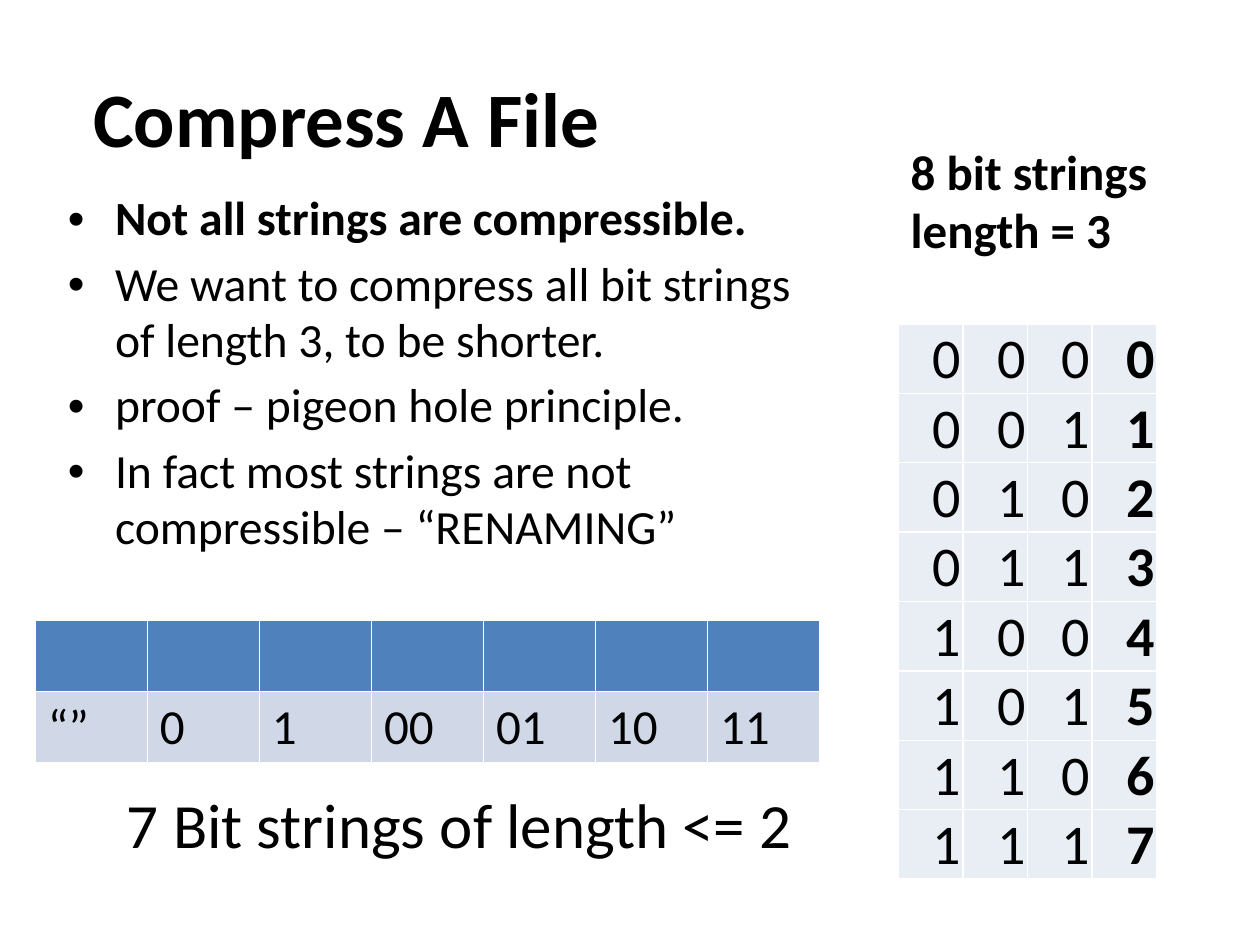
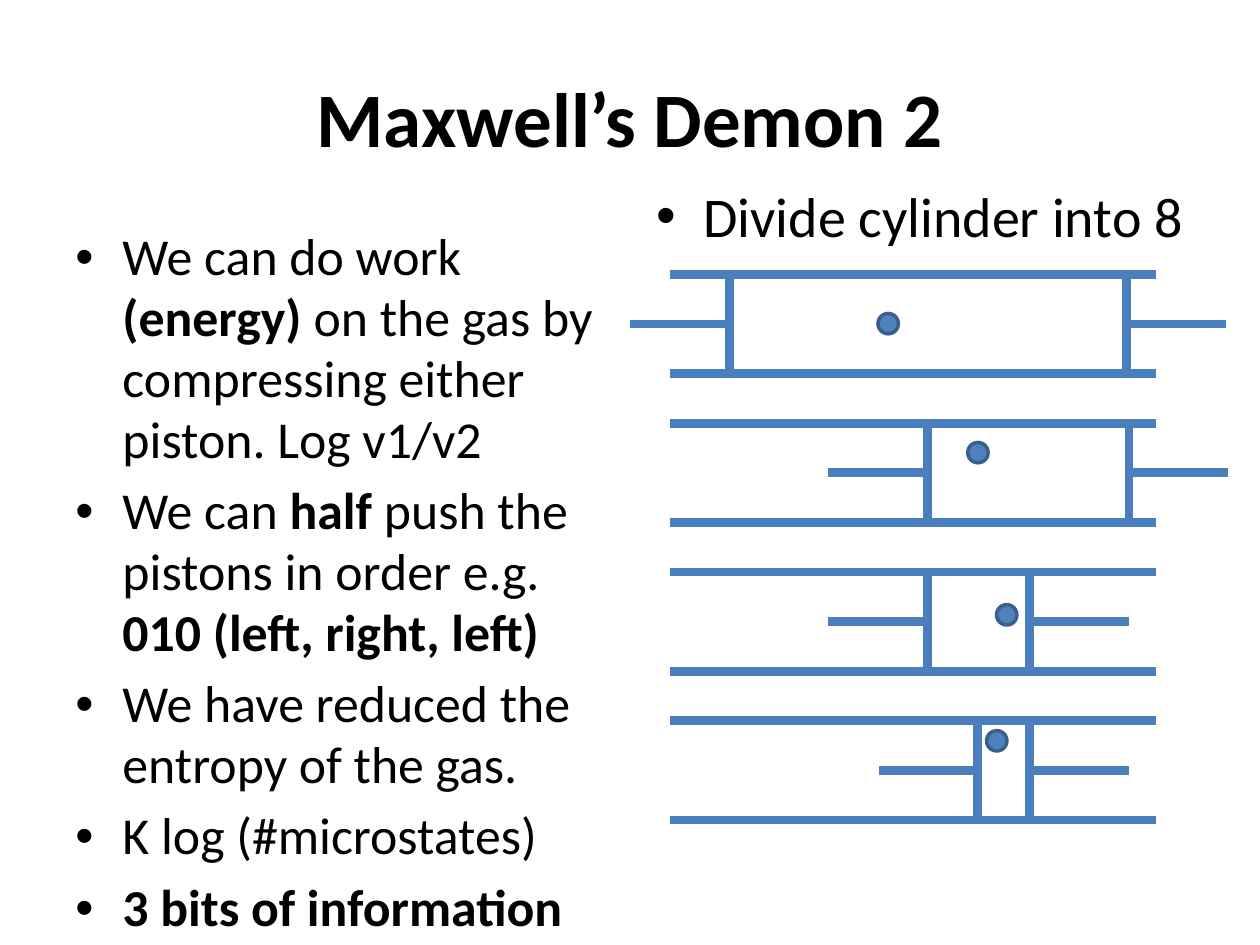
"""Build two slides on compression and Maxwell's demon."""
from dataclasses import dataclass

from lxml import etree
from pptx import Presentation
from pptx import util as u
from pptx.dml.color import RGBColor
from pptx.enum import shapes, text
from pptx.oxml.ns import qn

BLACK = RGBColor(0x00, 0x00, 0x00)
BLUE = RGBColor(0x4F, 0x81, 0xBD)
LINE_BLUE = RGBColor(0x4B, 0x7E, 0xBC)
DARK_BLUE = RGBColor(0x3A, 0x5F, 0x8C)
BAND = RGBColor(0xD0, 0xD8, 0xE8)
PALE = RGBColor(0xE9, 0xED, 0xF4)
FONT = "Calibri"
INDENT = u.Cm(0.95)
WALL_X, WALL_LENGTH, BORE = 13.5, 9.8, 2.0
ROD_LENGTH, GAS_SIZE = 2.0, 0.41
FIRST_TOP, CYLINDER_STEP = 5.53, 3.0


@dataclass
class Box:
    left: float
    top: float
    width: float
    height: float

    def lengths(self) -> tuple:
        return tuple(u.Cm(v) for v in (self.left, self.top, self.width, self.height))


@dataclass
class Cylinder:
    left_piston: float
    right_piston: float
    gas_x: float
    gas_drop: float


CYLINDERS = [
    Cylinder(14.71, 22.71, 17.7, 0.79),
    Cylinder(18.69, 22.76, 19.51, 0.39),
    Cylinder(18.69, 20.75, 20.09, 0.66),
    Cylinder(19.71, 20.75, 19.89, 0.2),
]


def add_bullet(p) -> None:
    pPr = p._p.get_or_add_pPr()
    pPr.set("marL", str(INDENT))
    pPr.set("indent", str(-INDENT))
    etree.SubElement(pPr, qn("a:buFont")).set("typeface", "Arial")
    etree.SubElement(pPr, qn("a:buChar")).set("char", "•")


def write(tf, lines: list, size: float, bold: bool = False, align=None,
          bullet: bool = False, spacing: float | None = None) -> None:
    """Fill a text frame; asterisks switch bold on and off."""
    for i, line in enumerate(lines):
        p = tf.add_paragraph() if i else tf.paragraphs[0]
        p.alignment = align
        p.line_spacing = spacing
        if bullet:
            p.space_before = u.Pt(round(size * 0.2, 1))
            add_bullet(p)
        for j, part in enumerate(line.split("*")):
            if part:
                r = p.add_run()
                r.text = part
                r.font.name, r.font.size = FONT, u.Pt(size)
                r.font.bold = bold or j % 2 == 1
                r.font.color.rgb = BLACK


def add_text(s, box: Box, lines: list, size: float, wrap: bool = True, **fmt) -> None:
    tf = s.shapes.add_textbox(*box.lengths()).text_frame
    tf.word_wrap = wrap
    write(tf, lines, size, **fmt)


def add_slide(prs, title: str, title_width: float):
    s = prs.slides.add_slide(prs.slide_layouts[5])
    sp = s.shapes.title
    sp.left, sp.top, sp.width, sp.height = Box(1.27, 0.76, title_width, 3.18).lengths()
    sp.text_frame.vertical_anchor = text.MSO_ANCHOR.MIDDLE
    write(sp.text_frame, [title], 44, bold=True, align=text.PP_ALIGN.CENTER)
    return s


def add_grid(s, left: float, top: float, col_width: float, row_height: float,
             rows: list, fills: list, size: float, header: bool = False,
             tight: bool = False, align=None):
    n_rows, n_cols = len(rows), len(rows[0])
    box = Box(left, top, col_width * n_cols, row_height * n_rows)
    tbl = s.shapes.add_table(n_rows, n_cols, *box.lengths()).table
    tbl.first_row, tbl.horz_banding = header, header
    for i, row in enumerate(rows):
        for j, value in enumerate(row):
            cell = tbl.cell(i, j)
            cell.fill.solid()
            cell.fill.fore_color.rgb = fills[i]
            if tight:
                cell.margin_left = cell.margin_right = cell.margin_top = u.Cm(0.03)
                cell.margin_bottom = 0
                cell.vertical_anchor = text.MSO_ANCHOR.BOTTOM
            write(cell.text_frame, [value], size, align=align)


def add_line(s, x1: float, y1: float, x2: float, y2: float) -> None:
    c = s.shapes.add_connector(shapes.MSO_CONNECTOR.STRAIGHT,
                               *(u.Cm(v) for v in (x1, y1, x2, y2)))
    c.line.color.rgb, c.line.width = LINE_BLUE, u.Pt(5)
    etree.SubElement(c._element.spPr, qn("a:effectLst"))


def add_cylinder(s, cyl: Cylinder, top: float) -> None:
    bottom, middle = top + BORE, top + BORE / 2
    for y in (top, bottom):
        add_line(s, WALL_X, y, WALL_X + WALL_LENGTH, y)
    for x, rod in ((cyl.left_piston, -ROD_LENGTH), (cyl.right_piston, ROD_LENGTH)):
        add_line(s, x, top, x, bottom)
        add_line(s, x + rod, middle, x, middle)
    box = Box(cyl.gas_x, top + cyl.gas_drop, GAS_SIZE, GAS_SIZE)
    sp = s.shapes.add_shape(shapes.MSO_SHAPE.OVAL, *box.lengths())
    sp.shadow.inherit = False
    sp.fill.solid()
    sp.fill.fore_color.rgb = BLUE
    sp.line.color.rgb, sp.line.width = DARK_BLUE, u.Pt(2)


def build_compression(prs) -> None:
    s = add_slide(prs, "Compress A File", 11.43)
    add_text(s, Box(1.12, 3.73, 15.24, 7.87), [
        "*Not all strings are compressible.*",
        "We want to compress all bit strings of length 3, to be shorter.",
        "proof – pigeon hole principle.",
        "In fact most strings are not compressible – “RENAMING”",
    ], 27.2, bullet=True, spacing=0.98)
    short_strings = ["“”", "0", "1", "00", "01", "10", "11"]
    add_grid(s, 0.71, 12.5, 2.26, 1.44, [[""] * len(short_strings), short_strings],
             [BLUE, BAND], 28, header=True)
    bit_rows = [[*f"{n:03b}", f"*{n}*"] for n in range(8)]
    add_grid(s, 18.11, 6.53, 1.3, 1.4, bit_rows, [PALE] * len(bit_rows), 32,
             tight=True, align=text.PP_ALIGN.RIGHT)
    add_text(s, Box(2.31, 15.72, 14.05, 1.8), ["7 Bit strings of length <= 2"], 36,
             wrap=False)
    add_text(s, Box(18.11, 2.72, 5.41, 2.64), ["8 bit strings", "length = 3"], 28,
             bold=True)


def build_demon(prs) -> None:
    s = add_slide(prs, "Maxwell’s Demon 2", 22.86)
    add_text(s, Box(1.27, 4.45, 11.43, 14.27), [
        "We can do work *(energy)* on the gas by compressing either piston. Log v1/v2",
        "We can *half* push the pistons in order e.g. *010 (left, right, left)*",
        "We have reduced the entropy of the gas.",
        "K log (#microstates)",
        "*3 bits of information*",
    ], 29.6, bullet=True, spacing=0.98)
    for i, cyl in enumerate(CYLINDERS):
        add_cylinder(s, cyl, FIRST_TOP + i * CYLINDER_STEP)
    add_text(s, Box(12.98, 3.53, 11.43, 13.49), ["Divide cylinder into 8"], 32,
             bullet=True)


def main() -> None:
    prs = Presentation()
    prs.slide_width, prs.slide_height = u.Cm(25.4), u.Cm(19.05)
    build_compression(prs)
    build_demon(prs)
    prs.save("out.pptx")


if __name__ == "__main__":
    main()
